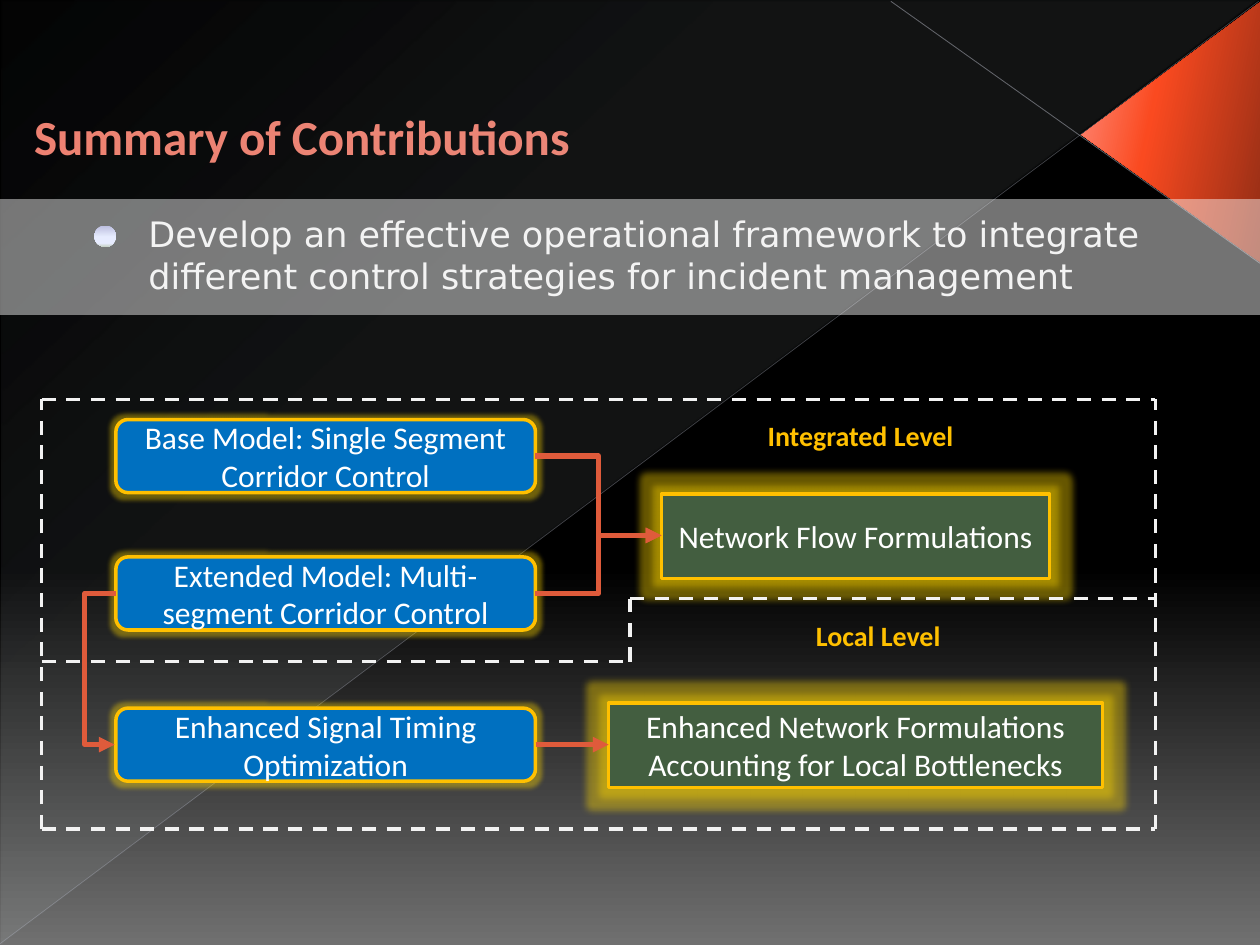
from lxml import etree
from pptx import Presentation
from pptx.dml.color import RGBColor
from pptx.enum.dml import MSO_LINE
from pptx.enum.shapes import MSO_CONNECTOR, MSO_SHAPE
from pptx.enum.text import MSO_ANCHOR, MSO_AUTO_SIZE, PP_ALIGN
from pptx.oxml.ns import qn
from pptx.util import Inches, Pt

RECTANGLE = MSO_SHAPE.RECTANGLE
ROUNDED = MSO_SHAPE.ROUNDED_RECTANGLE
STRAIGHT = MSO_CONNECTOR.STRAIGHT
ELBOW = MSO_CONNECTOR.ELBOW
DASH = MSO_LINE.DASH
CENTER = PP_ALIGN.CENTER
LEFT = PP_ALIGN.LEFT
MIDDLE = MSO_ANCHOR.MIDDLE
TOP = MSO_ANCHOR.TOP
GROW = MSO_AUTO_SIZE.SHAPE_TO_FIT_TEXT

COLORS = {
    "title": "EF7F6E", "body": "EAEAEA", "white": "FFFFFF", "gold": "FFC000",
    "glow": "FFD800", "model": "0070C0", "network": "435E40",
    "arrow": "DF5B3B", "boundary": "F2F2F2", "ray": "C2C5D2", "diagonal": "BABECD",
}
BACKDROP = [(0, "000000", 100), (60, "000000", 100), (100, "707070", 100)]
SHEEN = [(0, "C5D1D7", 10), (70, "C5D1D7", 8), (100, "C5D1D7", 1)]
CORNER = [(0, "922D15", 100), (60, "FA4A20", 100), (100, "FF9081", 100)]
BULLET = [(0, "8488C4", 100), (53, "D4DEFF", 100), (83, "D4DEFF", 100), (100, "96AB94", 100)]


def rgb(name):
    return RGBColor.from_string(COLORS[name])


def add_child(parent, tag, **attributes):
    child = etree.SubElement(parent, qn(tag))
    for key, value in attributes.items():
        child.set(key, str(value))
    return child


def add_color(parent, value, opacity):
    color = add_child(parent, "a:srgbClr", val=value)
    if opacity < 100:
        add_child(color, "a:alpha", val=opacity * 1000)


def set_opacity(properties, opacity):
    color = properties.find(qn("a:solidFill")).find(qn("a:srgbClr"))
    add_child(color, "a:alpha", val=opacity * 1000)


def set_gradient(properties, stops, angle):
    gradient = etree.Element(qn("a:gradFill"), rotWithShape="1")
    stop_list = add_child(gradient, "a:gsLst")
    for position, value, opacity in stops:
        add_color(add_child(stop_list, "a:gs", pos=position * 1000), value, opacity)
    add_child(gradient, "a:lin", ang=angle * 60000, scaled=0)
    properties.replace(properties.find(qn("a:solidFill")), gradient)


def set_text(shape, text, size, font, color, bold=False, align=CENTER, anchor=MIDDLE):
    frame = shape.text_frame
    frame.word_wrap = True
    frame.vertical_anchor = anchor
    frame.text = text
    paragraph = frame.paragraphs[0]
    paragraph.alignment = align
    run_font = paragraph.runs[0].font
    run_font.size = Pt(size)
    run_font.name = font
    run_font.bold = bold
    run_font.color.rgb = rgb(color)


def add_shape(slide, kind, left, top, width, height, color="white"):
    shape = slide.shapes.add_shape(kind, Inches(left), Inches(top), Inches(width), Inches(height))
    shape.shadow.inherit = False
    shape.fill.solid()
    shape.fill.fore_color.rgb = rgb(color)
    shape.line.fill.background()
    return shape


def add_gradient_shape(slide, kind, bounds, stops, angle, rotation=0, flip=False):
    shape = add_shape(slide, kind, *bounds)
    shape.rotation = rotation
    properties = shape._element.spPr
    set_gradient(properties, stops, angle)
    if flip:
        properties.find(qn("a:xfrm")).set("flipV", "1")
    return shape


def add_box(slide, kind, left, top, width, height, color, text, glow_points):
    box = add_shape(slide, kind, left, top, width, height, color)
    box.line.color.rgb = rgb("gold")
    box.line.width = Pt(2)
    effects = box._element.spPr.find(qn("a:effectLst"))
    add_color(add_child(effects, "a:glow", rad=Pt(glow_points)), COLORS["glow"], 40)
    set_text(box, text, 18, "Calibri", "white")


def add_line(slide, start, end, color, width, kind=STRAIGHT):
    points = [Inches(value) for value in (*start, *end)]
    line = slide.shapes.add_connector(kind, *points)
    line.line.color.rgb = rgb(color)
    line.line.width = Pt(width)
    add_child(line._element.spPr, "a:effectLst")
    return line


def add_arrow(slide, start, end, kind=ELBOW, bend=0.5):
    arrow = add_line(slide, start, end, "arrow", 3, kind)
    add_child(arrow.line._get_or_add_ln(), "a:tailEnd", type="triangle")
    if kind == ELBOW:
        guides = arrow._element.spPr.find(qn("a:prstGeom")).find(qn("a:avLst"))
        add_child(guides, "a:gd", name="adj1", fmla=f"val {round(bend * 100000)}")


def add_label(slide, left, top, text):
    label = slide.shapes.add_textbox(Inches(left), Inches(top), Inches(5.5), Inches(0.75))
    set_text(label, text, 16, "Calibri", "gold", bold=True)


def add_backdrop(slide):
    slide.background.fill.solid()
    set_gradient(slide._element.find(".//" + qn("p:bgPr")), BACKDROP, 90)
    add_gradient_shape(slide, MSO_SHAPE.RIGHT_TRIANGLE, (0.01, 0.01, 9.98, 7.48), SHEEN, 133, flip=True)
    corner = add_gradient_shape(slide, MSO_SHAPE.ISOSCELES_TRIANGLE, (8.26, 0.34, 2.07, 1.42),
                                CORNER, 258, rotation=90, flip=True)
    corner.adjustments[0] = 0.51
    for start, end, color, width, opacity in (
        ((10, 2.09), (7.07, 0.01), "ray", 0.47, 45),
        ((0, 7.49), (9.99, 0.01), "diagonal", 0.39, 35),
    ):
        line = add_line(slide, start, end, color, width)
        set_opacity(line.line._get_or_add_ln(), opacity)


def add_title(slide):
    title = slide.shapes.title
    title.left, title.top, title.width, title.height = map(Inches, (0.17, 0.33, 8.33, 1.49))
    set_text(title, "Summary of Contributions", 28, "Calibri", "title", bold=True, align=LEFT)


def add_statement(slide):
    add_gradient_shape(slide, MSO_SHAPE.OVAL, (0.75, 1.79, 0.17, 0.17), BULLET, 90)
    statement = slide.shapes.add_textbox(Inches(1.08), Inches(1.64), Inches(8.08), Inches(0.77))
    set_text(statement, "Develop an effective operational framework to integrate "
             "different control strategies for incident management",
             20, "DejaVu Sans", "body", align=LEFT, anchor=TOP)
    statement.text_frame.auto_size = GROW
    band = add_shape(slide, RECTANGLE, 0, 1.58, 10, 0.92)
    set_opacity(band._element.spPr, 45)


def add_framework(slide):
    for top, text in (
        (3.33, "Base Model: Single Segment Corridor Control"),
        (4.42, "Extended Model: Multi-segment Corridor Control"),
        (5.62, "Enhanced Signal Timing Optimization"),
    ):
        add_box(slide, ROUNDED, 0.92, top, 3.33, 0.58, "model", text, 5)
    for left, top, width, text in (
        (5.25, 3.92, 3.08, "Network Flow Formulations"),
        (4.83, 5.58, 3.92, "Enhanced Network Formulations Accounting for Local Bottlenecks"),
    ):
        add_box(slide, RECTANGLE, left, top, width, 0.67, "network", text, 8)

    add_arrow(slide, (4.25, 5.91), (4.83, 5.91), STRAIGHT)
    for start_y in (3.62, 4.71):
        add_arrow(slide, (4.25, start_y), (5.25, 4.25))
    add_arrow(slide, (0.92, 4.71), (0.91, 5.91), bend=25)

    left, right, top, bottom = 0.33, 9.17, 3.17, 6.58
    for start, end in (
        ((left, 5.25), (5, 5.25)),
        ((5, 5.25), (5, 4.75)),
        ((5, 4.75), (right, 4.75)),
        ((left, bottom), (right, bottom)),
        ((left, bottom), (left, top)),
        ((left, top), (right, top)),
        ((right, bottom), (right, top)),
    ):
        add_line(slide, start, end, "boundary", 2).line.dash_style = DASH
    add_label(slide, 4.08, 3.08, "Integrated Level")
    add_label(slide, 4.22, 4.67, "Local Level")


def main():
    presentation = Presentation()
    presentation.slide_width = Inches(10)
    presentation.slide_height = Inches(7.5)
    slide = presentation.slides.add_slide(presentation.slide_layouts[5])
    add_backdrop(slide)
    add_title(slide)
    add_statement(slide)
    add_framework(slide)
    presentation.save("out.pptx")


if __name__ == "__main__":
    main()
